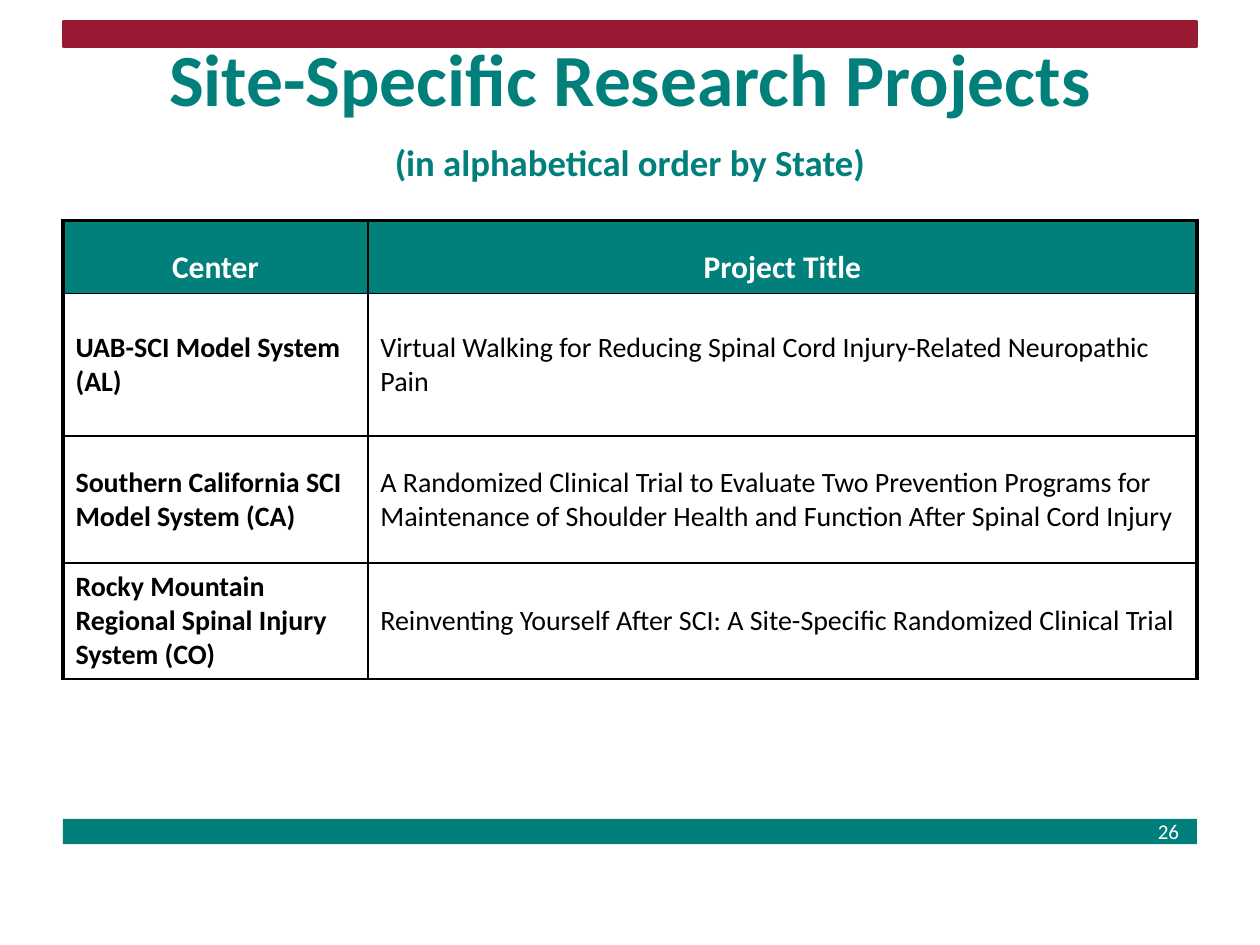
from dataclasses import dataclass

from lxml import etree
from pptx import Presentation
from pptx.dml.color import RGBColor
from pptx.enum.shapes import MSO_SHAPE as Shape
from pptx.enum.text import MSO_ANCHOR as Anchor, MSO_AUTO_SIZE as AutoSize, PP_ALIGN as Align
from pptx.oxml.ns import qn
from pptx.util import Inches, Pt


@dataclass(frozen=True)
class Theme:
    font: str = "Calibri"
    teal: str = "007F7B"
    crimson: str = "981A32"
    white: str = "FFFFFF"
    black: str = "000000"
    title: int = 42
    subtitle: int = 21
    header: int = 18
    body: int = 16
    number: int = 12
    thick: float = 2.25
    thin: float = 1


THEME = Theme()
LEFT, WIDTH = 0.5, 9
COLUMN_WIDTHS = [2.42, 6.58]
ROW_HEIGHTS = [0.58, 1.13, 1.01, 0.92]
HEADERS = ("Center", "Project Title")
PROJECTS = [
    ("UAB-SCI Model System (AL)",
     "Virtual Walking for Reducing Spinal Cord Injury-Related Neuropathic Pain"),
    ("Southern California SCI Model System (CA)",
     "A Randomized Clinical Trial to Evaluate Two Prevention Programs for "
     "Maintenance of Shoulder Health and Function After Spinal Cord Injury"),
    ("Rocky Mountain Regional Spinal Injury System (CO)",
     "Reinventing Yourself After SCI: A Site-Specific Randomized Clinical Trial"),
]


def add_run(paragraph, text, size, color, bold=False):
    run = paragraph.add_run()
    run.text = text
    run.font.name = THEME.font
    run.font.size = Pt(size)
    run.font.bold = bold
    run.font.color.rgb = RGBColor.from_string(color)


def add_bar(slide, top, color, line_width=None):
    bar = slide.shapes.add_shape(
        Shape.RECTANGLE, Inches(LEFT), Inches(top), Inches(WIDTH), Inches(0.2))
    bar.shadow.inherit = False
    bar.fill.solid()
    bar.fill.fore_color.rgb = RGBColor.from_string(color)
    if line_width:
        bar.line.color.rgb = RGBColor.from_string(color)
        bar.line.width = Pt(line_width)
    else:
        bar.line.fill.background()


def add_page_number(slide, number):
    box = slide.shapes.add_textbox(Inches(9.09), Inches(6.45), Inches(0.42), Inches(0.3))
    box.text_frame.word_wrap = True
    add_run(box.text_frame.paragraphs[0], number, THEME.number, THEME.white)


def fill_title(slide, heading, note):
    title = slide.shapes.title
    title.left, title.top = Inches(LEFT), Inches(0.37)
    title.width, title.height = Inches(WIDTH), Inches(1.18)
    frame = title.text_frame
    frame.auto_size = AutoSize.NONE
    frame.vertical_anchor = Anchor.MIDDLE
    paragraph = frame.paragraphs[0]
    paragraph.alignment = Align.CENTER
    paragraph.line_spacing = Pt(36)
    add_run(paragraph, heading, THEME.title, THEME.teal, bold=True)
    paragraph.add_line_break()
    add_run(paragraph, note, THEME.subtitle, THEME.teal, bold=True)


def set_borders(cell, widths):
    """Draw the cell's borders; widths maps L, R, T, B to points."""
    properties = cell._tc.get_or_add_tcPr()
    for side in "LRTB":
        line = etree.SubElement(properties, qn(f"a:ln{side}"), w=str(Pt(widths[side])))
        fill = etree.SubElement(line, qn("a:solidFill"))
        etree.SubElement(fill, qn("a:srgbClr"), val=THEME.black)


def fill_cell(cell, text, is_header, is_center):
    # Thick outer frame at the left, right and top; thin rules elsewhere
    set_borders(cell, {
        "L": THEME.thick if is_center else THEME.thin,
        "R": THEME.thin if is_center else THEME.thick,
        "T": THEME.thick if is_header else THEME.thin,
        "B": THEME.thin,
    })
    paragraph = cell.text_frame.paragraphs[0]
    if is_header:
        cell.fill.solid()
        cell.fill.fore_color.rgb = RGBColor.from_string(THEME.teal)
        cell.vertical_anchor = Anchor.BOTTOM
        paragraph.alignment = Align.CENTER
        add_run(paragraph, text, THEME.header, THEME.white, bold=True)
    else:
        cell.fill.background()
        cell.vertical_anchor = Anchor.MIDDLE
        add_run(paragraph, text, THEME.body, THEME.black, bold=is_center)


def add_project_table(slide):
    rows = [HEADERS, *PROJECTS]
    table = slide.shapes.add_table(
        len(rows), len(HEADERS), Inches(LEFT), Inches(1.75),
        Inches(WIDTH), Inches(sum(ROW_HEIGHTS))).table
    table.horz_banding = False
    table.first_row = False
    for column, width in zip(table.columns, COLUMN_WIDTHS):
        column.width = Inches(width)
    for row, height in zip(table.rows, ROW_HEIGHTS):
        row.height = Inches(height)
    for row_index, texts in enumerate(rows):
        for column_index, text in enumerate(texts):
            fill_cell(table.cell(row_index, column_index), text,
                      is_header=row_index == 0, is_center=column_index == 0)


def main():
    presentation = Presentation()
    presentation.slide_width, presentation.slide_height = Inches(10), Inches(7.5)
    slide = presentation.slides.add_slide(presentation.slide_layouts[5])

    # Footer and top bars
    add_bar(slide, 6.5, THEME.teal)
    add_page_number(slide, "26")
    add_bar(slide, 0.17, THEME.crimson, line_width=1.5)

    # Title and projects
    fill_title(slide, "Site-Specific Research Projects", "(in alphabetical order by State)")
    add_project_table(slide)

    presentation.save("out.pptx")


if __name__ == "__main__":
    main()
